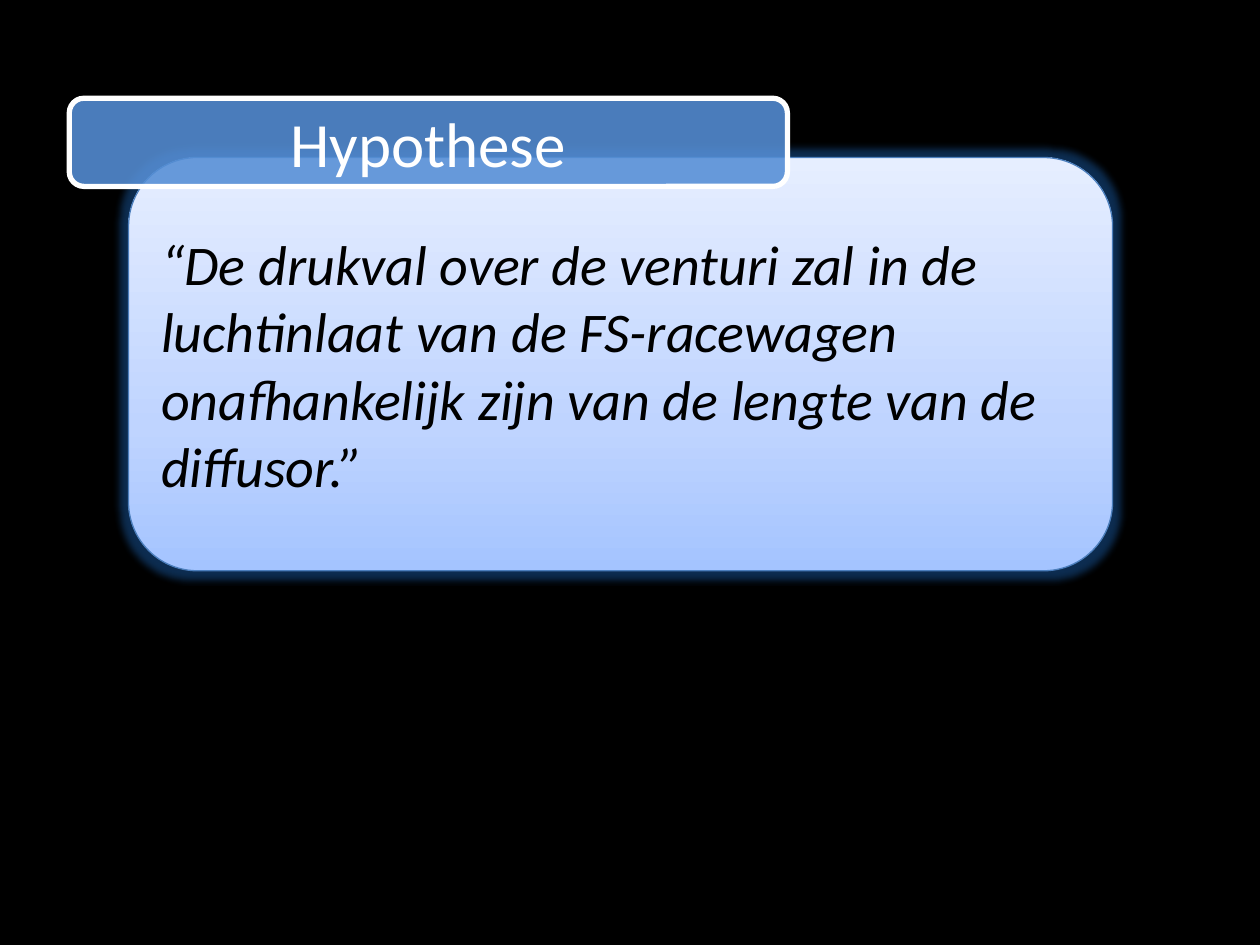
from dataclasses import dataclass

from lxml.etree import SubElement as Sub
from pptx import Presentation
from pptx.dml.color import RGBColor as Rgb
from pptx.enum.shapes import MSO_SHAPE as Shape
from pptx.enum.text import MSO_ANCHOR as Anchor, PP_ALIGN as Align
from pptx.oxml.ns import qn
from pptx.util import Inches, Pt


@dataclass(frozen=True)
class Theme:
    """Colours, font and type sizes of the slide."""
    font: str = "Calibri"
    back: str = "000000"
    ink: str = "000000"
    light: str = "FFFFFF"
    tab: str = "558ED5"
    edge: str = "4B7EBC"
    glow: str = "1F6FC8"
    shade: tuple = ((0, "A4C4FF"), (35, "BFD4FF"), (100, "E6EEFF"))
    head: int = 36
    body: int = 32


THEME = Theme()


def add_tint(node, tint, alpha=100):
    """Add a colour with its opacity in percent to an XML node."""
    color = Sub(node, qn("a:srgbClr"), val=tint)
    if alpha < 100:
        Sub(color, qn("a:alpha"), val=str(alpha * 1000))


def add_panel(slide, box, edge, width):
    """Add a rounded rectangle with an outline and no shadow."""
    panel = slide.shapes.add_shape(Shape.ROUNDED_RECTANGLE, *map(Inches, box))
    panel.shadow.inherit = False
    panel.line.color.rgb = Rgb.from_string(edge)
    panel.line.width = Pt(width)
    return panel


def set_text(panel, text, size, tint, align, italic=False):
    """Write one centred-in-height paragraph in a panel."""
    frame = panel.text_frame
    frame.word_wrap = True
    frame.vertical_anchor = Anchor.MIDDLE
    para = frame.paragraphs[0]
    para.text = text
    para.alignment = align
    font = para.font
    font.name, font.size, font.italic = THEME.font, Pt(size), italic
    font.color.rgb = Rgb.from_string(tint)


def fade(panel, stops):
    """Fill a panel with a gradient that runs from bottom to top."""
    panel.fill.gradient()
    panel.fill.gradient_angle = 90
    group = panel.element.spPr.find(".//" + qn("a:gsLst"))
    group.clear()
    for place, tint in stops:
        add_tint(Sub(group, qn("a:gs"), pos=str(place * 1000)), tint)


def add_glow(panel):
    """Give a panel a soft glow and a short shadow below."""
    effects = panel.element.spPr.find(qn("a:effectLst"))
    glow = Sub(effects, qn("a:glow"), rad=str(Pt(8)))
    add_tint(glow, THEME.glow, 40)
    shadow = Sub(effects, qn("a:outerShdw"), blurRad=str(Pt(3.1)),
                 dist=str(Pt(1.6)), dir="5400000", rotWithShape="0")
    add_tint(shadow, THEME.ink, 38)


def add_card(slide, text):
    """Add the glowing card that holds the statement."""
    card = add_panel(slide, (1.02, 1.25, 7.81, 3.28), THEME.edge, 0.75)
    fade(card, THEME.shade)
    add_glow(card)
    set_text(card, text, THEME.body, THEME.ink, Align.LEFT, True)


def add_tab(slide, text):
    """Add the see-through heading tab."""
    tab = add_panel(slide, (0.55, 0.78, 5.7, 0.7), THEME.light, 3)
    tab.fill.solid()
    tab.fill.fore_color.rgb = Rgb.from_string(THEME.tab)
    color = tab.element.spPr.find(qn("a:solidFill")).find(qn("a:srgbClr"))
    Sub(color, qn("a:alpha"), val="88000")
    set_text(tab, text, THEME.head, THEME.light, Align.CENTER)


def main():
    """Build and save the slide."""
    deck = Presentation()
    deck.slide_width, deck.slide_height = Inches(10), Inches(7.5)
    slide = deck.slides.add_slide(deck.slide_layouts[6])
    back = slide.background.fill
    back.solid()
    back.fore_color.rgb = Rgb.from_string(THEME.back)
    add_card(slide, "“De drukval over de venturi zal in de luchtinlaat van de "
                    "FS-racewagen onafhankelijk zijn van de lengte van de "
                    "diffusor.”")
    add_tab(slide, "Hypothese")
    deck.save("out.pptx")


if __name__ == "__main__":
    main()
